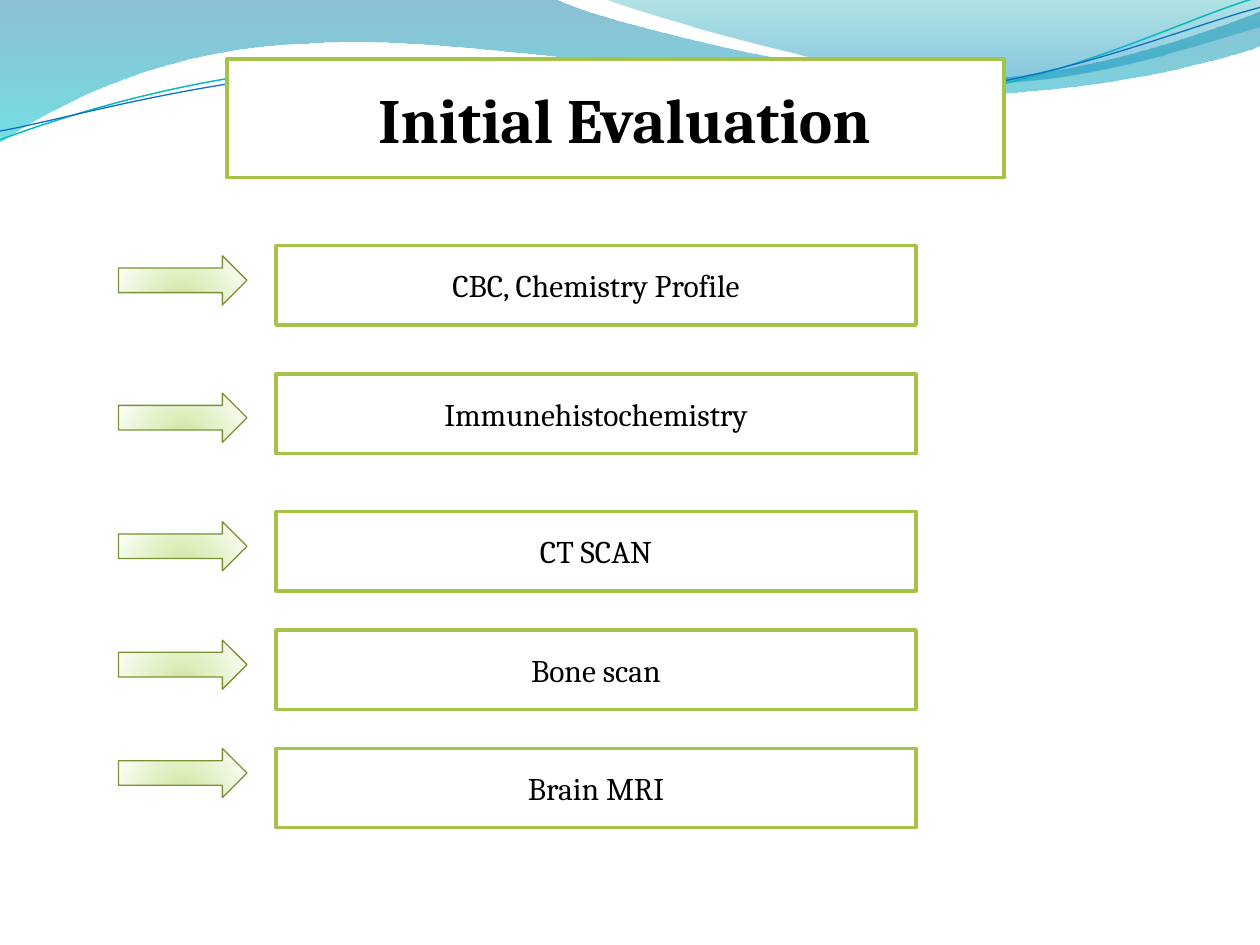
from dataclasses import dataclass
from math import cos, radians, sin

from lxml.etree import SubElement
from pptx import Presentation
from pptx.dml.color import RGBColor
from pptx.enum.shapes import MSO_SHAPE
from pptx.enum.text import MSO_ANCHOR, MSO_AUTO_SIZE, PP_ALIGN
from pptx.oxml import parse_xml
from pptx.oxml.ns import nsdecls, qn
from pptx.util import Inches, Pt


@dataclass(frozen=True)
class Theme:
    """Colours, font and type sizes of the slide."""
    font: str = "Cambria"
    ink: str = "000000"
    paper: str = "FFFFFF"
    border: str = "A5C249"
    arrow_line: str = "7B9135"
    arrow_stops: tuple = ((0, "C9DF97", 100), (43, "E0F0C1", 100),
                          (93, "F5FAEC", 100), (100, "FCFEF8", 100))
    title_size: int = 36
    box_size: int = 18


@dataclass(frozen=True)
class Step:
    """An evaluation step with the tops of its arrow and box."""
    text: str
    arrow_top: float
    box_top: float


@dataclass(frozen=True)
class Wave:
    """A header outline; segments are line ends or Bezier triples."""
    start: tuple
    segments: tuple
    stops: tuple = ()
    line: str = ""
    width: float = 0
    center: tuple = (0, 0)
    angle: float = 0


THEME = Theme()
LINEAR = '<a:lin ang="5400000" scaled="0"/>'
RADIAL = ('<a:path path="circle"><a:fillToRect l="50000" t="130000" '
          'r="50000" b="-30000"/></a:path>')
STEPS = (
    Step("CBC, Chemistry Profile", 2.03, 1.95),
    Step("Immunehistochemistry", 3.12, 2.97),
    Step("CT SCAN", 4.14, 4.06),
    Step("Bone scan", 5.08, 5.0),
    Step("Brain MRI", 5.94, 5.94),
)
WAVES = (
    Wave((0, 0), (
        (4.4, -0.01), (4.76, 0.17, 6.64, 0.63, 7.58, 0.63),
        (8.53, 0.63, 9.58, 0.26, 10, 0.09), (10.01, 0.36),
        (9.83, 0.44, 8.7, 0.76, 7.46, 0.75),
        (6.22, 0.75, 3.82, 0.28, 2.57, 0.34),
        (1.29, 0.36, 0.46, 0.83, -0.01, 1.13), (0, 0),
    ), stops=((0, "0074A1", 45), (100, "00C6CF", 55))),
    Wave((4.79, -0.01), (
        (5.09, 0.11, 6.82, 0.62, 7.69, 0.65),
        (8.56, 0.69, 9.61, 0.32, 10, 0.21), (10, 0), (4.79, -0.01),
    ), stops=((0, "00A1A9", 30), (80, "008BBF", 45))),
    Wave((0, 1.11), (
        (0.48, 0.93, 1.58, 0.57, 2.77, 0.52),
        (3.95, 0.47, 5.93, 0.89, 7.13, 0.8),
        (8.33, 0.71, 9.38, 0.15, 9.98, -0.02),
    ), line="0AB8BF", width=0.85, center=(4.99, 0.58), angle=-2.7),
    Wave((0, 1.04), (
        (0.47, 0.96, 1.64, 0.61, 2.83, 0.56),
        (4.03, 0.51, 5.97, 0.84, 7.17, 0.75),
        (8.36, 0.67, 9.41, 0.21, 10, 0.06),
    ), line="0F6FC6", width=0.75, center=(5, 0.59), angle=-2.7),
)


def set_gradient(sp, stops: tuple, direction: str) -> None:
    """Fill a shape with a gradient of (position, colour, opacity) stops."""
    sp.fill.background()
    marks = "".join(
        f'<a:gs pos="{pos * 1000}"><a:srgbClr val="{color}">'
        f'<a:alpha val="{opacity * 1000}"/></a:srgbClr></a:gs>'
        for pos, color, opacity in stops)
    spPr = sp.element.spPr
    spPr.replace(spPr.find(qn("a:noFill")), parse_xml(
        f'<a:gradFill {nsdecls("a")} rotWithShape="1">'
        f'<a:gsLst>{marks}</a:gsLst>{direction}</a:gradFill>'))


def set_line(sp, color: str, width: float) -> None:
    """Give a shape a solid outline."""
    sp.line.color.rgb = RGBColor.from_string(color)
    sp.line.width = Pt(width)


def unturn(wave: Wave, x: float, y: float) -> tuple[int, int]:
    """Return a point in lengths as it lies before the wave is rotated."""
    a = radians(-wave.angle)
    cx, cy = wave.center
    dx, dy = x - cx, y - cy
    return (Inches(cx + dx * cos(a) - dy * sin(a)),
            Inches(cy + dx * sin(a) + dy * cos(a)))


def bend(sp, segments: tuple) -> None:
    """Turn each run of three line ends into one Bezier curve."""
    lines = iter(list(sp.element.iter(qn("a:lnTo"))))
    for seg in segments:
        first = next(lines)
        if len(seg) == 6:
            curve = SubElement(first.getparent(), qn("a:cubicBezTo"))
            first.addprevious(curve)
            for line in (first, next(lines), next(lines)):
                curve.append(line[0])
                line.getparent().remove(line)


def draw_wave(s, wave: Wave) -> None:
    """Draw one filled or stroked wave of the header."""
    points = [unturn(wave, *seg[i:i + 2])
              for seg in wave.segments for i in range(0, len(seg), 2)]
    builder = s.shapes.build_freeform(*unturn(wave, *wave.start))
    builder.add_line_segments(points, close=bool(wave.stops))
    sp = builder.convert_to_shape()
    bend(sp, wave.segments)
    sp.rotation = wave.angle
    sp.shadow.inherit = False
    if wave.stops:
        set_gradient(sp, wave.stops, LINEAR)
        sp.line.fill.background()
    else:
        sp.fill.background()
        set_line(sp, wave.line, wave.width)


def write(sp, text: str, *, size: int, bold: bool = False) -> None:
    """Write centred right-to-left text into a shape."""
    tf = sp.text_frame
    tf.word_wrap = True
    tf.auto_size = MSO_AUTO_SIZE.NONE
    tf.vertical_anchor = MSO_ANCHOR.MIDDLE
    p = tf.paragraphs[0]
    p.alignment = PP_ALIGN.CENTER
    sp.element.find(".//" + qn("a:pPr")).set("rtl", "1")
    r = p.add_run()
    r.text = text
    r.font.name = THEME.font
    r.font.size = Pt(size)
    r.font.bold = bold
    r.font.color.rgb = RGBColor.from_string(THEME.ink)


def frame(sp) -> None:
    """Give a shape the white fill and green border."""
    sp.fill.solid()
    sp.fill.fore_color.rgb = RGBColor.from_string(THEME.paper)
    set_line(sp, THEME.border, 2)


def draw_step(s, step: Step) -> None:
    """Draw the arrow and the labelled box of a step."""
    arrow = s.shapes.add_shape(MSO_SHAPE.RIGHT_ARROW, Inches(0.94),
                               Inches(step.arrow_top), Inches(1.02), Inches(0.39))
    arrow.shadow.inherit = False
    set_gradient(arrow, THEME.arrow_stops, RADIAL)
    set_line(arrow, THEME.arrow_line, 0.75)

    box = s.shapes.add_shape(MSO_SHAPE.RECTANGLE, Inches(2.19),
                             Inches(step.box_top), Inches(5.08), Inches(0.63))
    box.shadow.inherit = False
    frame(box)
    write(box, step.text, size=THEME.box_size)


def main() -> None:
    """Build and save the slide."""
    prs = Presentation()
    prs.slide_width, prs.slide_height = Inches(10), Inches(7.5)
    s = prs.slides.add_slide(prs.slide_layouts[5])
    for wave in WAVES:
        draw_wave(s, wave)
    for step in STEPS:
        draw_step(s, step)
    title = s.shapes.title
    title.left, title.top = Inches(1.8), Inches(0.47)
    title.width, title.height = Inches(6.17), Inches(0.94)
    frame(title)
    write(title, "Initial Evaluation ", size=THEME.title_size, bold=True)
    title.element.getparent().append(title.element)
    prs.save("out.pptx")


if __name__ == "__main__":
    main()
